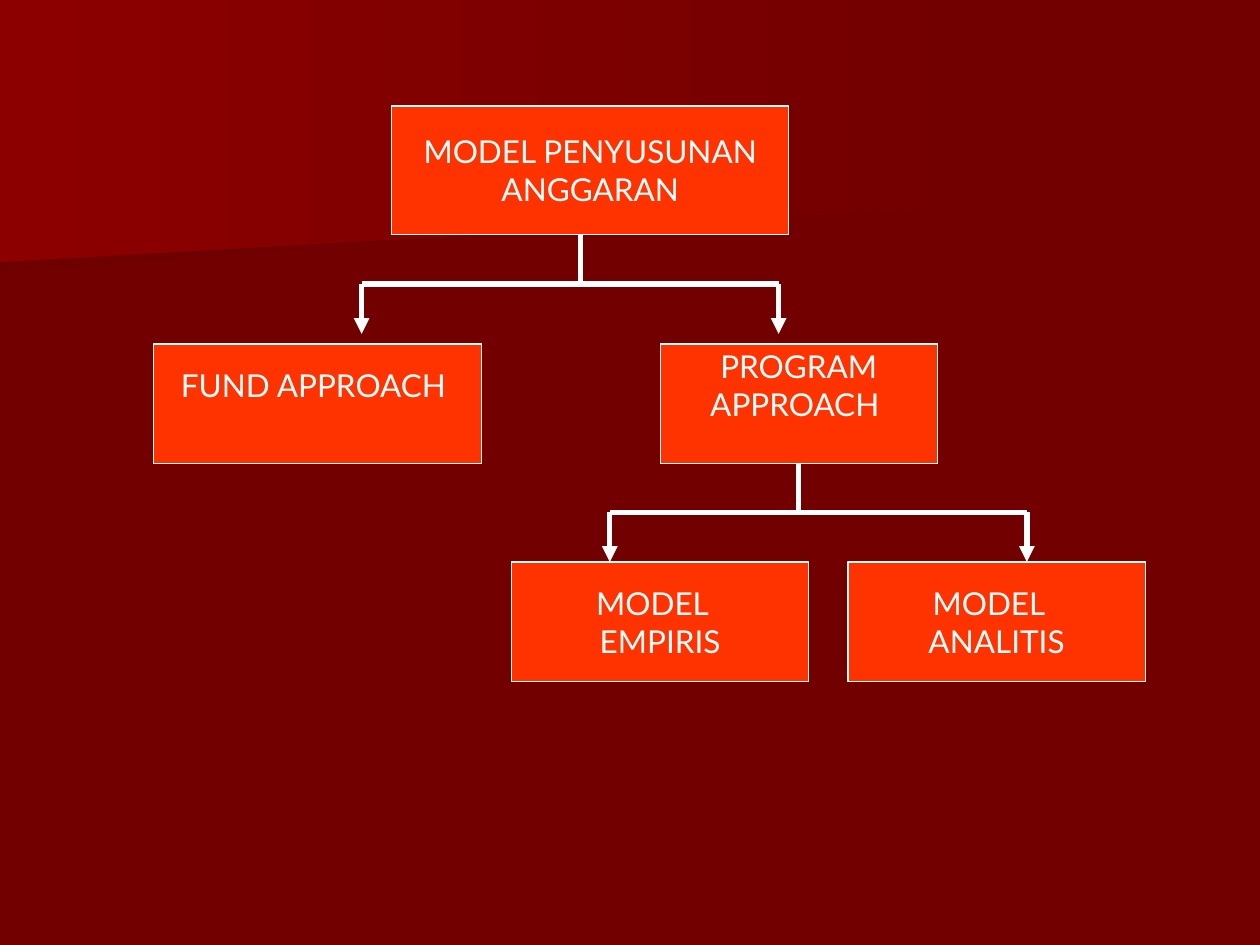
from lxml import etree
from pptx import Presentation
from pptx import util as u
from pptx.dml.color import RGBColor
from pptx.enum import shapes, text
from pptx.oxml.ns import qn

COLUMNS, ROWS = 100, 75
CELL = u.Inches(0.1)
COLORS = {"ground": "720000", "shade": "6F0000", "glow": "8C0000",
          "box": "FF3300", "ink": "FFFFFF"}
FONT = {"name": "Lato", "size": u.Pt(18)}
BOX_FORMAT = {"word_wrap": False, "vertical_anchor": text.MSO_ANCHOR.MIDDLE}
# Leaves one text line free at the bottom of the box
RAISED = {"margin_top": 0, "margin_bottom": u.Inches(0.3)}
BOTTOM = 2


def cells(*counts):
    return [round(count * CELL) for count in counts]


def color(name):
    return RGBColor.from_string(COLORS[name])


def apply(target, values):
    for key, value in values.items():
        setattr(target, key, value)


def add_band(slide, corners, start_color):
    """Draw a background band that fades rightwards into the ground colour."""
    points = [cells(*corner) for corner in corners]
    outline = slide.shapes.build_freeform(*points[0], scale=1.0)
    outline.add_line_segments(points[1:], close=True)
    band = outline.convert_to_shape()
    band.shadow.inherit = False
    band.line.fill.background()
    band.fill.gradient()
    band.fill.gradient_angle = 0
    for stop, name in zip(band.fill.gradient_stops, (start_color, "ground")):
        stop.color.rgb = color(name)


def add_background(slide):
    slide.background.fill.solid()
    slide.background.fill.fore_color.rgb = color("ground")
    add_band(slide, [(77.8, 15.3), (0, 21.7), (0, 10.1), (77.9, 10.1)], "shade")
    add_band(slide, [(79.2, 16.2), (0, 20.8), (0, 0), (79.2, 0)], "glow")


def add_box(slide, place, lines, margins=None):
    box = slide.shapes.add_shape(shapes.MSO_SHAPE.RECTANGLE, *cells(*place))
    box.shadow.inherit = False
    box.fill.solid()
    box.fill.fore_color.rgb = color("box")
    box.line.color.rgb = color("ink")
    box.line.width = u.Pt(0.75)
    frame = box.text_frame
    apply(frame, {**BOX_FORMAT, **(margins or {})})
    frame.text = "\n".join(lines)
    for paragraph in frame.paragraphs:
        paragraph.alignment = text.PP_ALIGN.CENTER
        for run in paragraph.runs:
            apply(run.font, FONT)
            run.font.color.rgb = color("ink")
    return box


def add_line(slide, start, end, arrow=False):
    line = slide.shapes.add_connector(
        shapes.MSO_CONNECTOR.STRAIGHT, *cells(*start, *end))
    line.line.color.rgb = color("ink")
    line.line.width = u.Pt(3)
    if arrow:
        etree.SubElement(line.line._get_or_add_ln(), qn("a:tailEnd"), type="triangle")
    etree.SubElement(line._element.spPr, qn("a:effectLst"))
    return line


def add_branch(slide, place, stem_x):
    """Split a stem in two: the stem fills the upper half, the arrows the lower."""
    left, top, width, height = place
    right, middle, bottom = left + width, top + height / 2, top + height
    add_line(slide, (left, middle), (right, middle))
    for x in (left, right):
        add_line(slide, (x, middle), (x, bottom), arrow=True)
    return add_line(slide, (stem_x, top), (stem_x, middle))


def add_model_tree(slide):
    add_box(slide, (31.1, 8.4, 31.5, 10.2), ["MODEL PENYUSUNAN", "ANGGARAN"])
    add_box(slide, (12.2, 27.3, 26, 9.5), ["FUND APPROACH "], RAISED)
    program = add_box(slide, (52.4, 27.3, 22, 9.5), ["PROGRAM", "APPROACH "], RAISED)
    for left, kind in ((40.6, "EMPIRIS"), (67.3, "ANALITIS")):
        add_box(slide, (left, 44.6, 23.6, 9.5), ["MODEL  ", kind])
    add_branch(slide, (28.7, 18.6, 33.1, 7.9), stem_x=46.1)
    program_stem = add_branch(slide, (48.4, 36.7, 33.1, 7.9), stem_x=63.4)
    program_stem.begin_connect(program, BOTTOM)


def main():
    deck = Presentation()
    deck.slide_width, deck.slide_height = cells(COLUMNS, ROWS)
    slide = deck.slides.add_slide(deck.slide_layouts[6])
    add_background(slide)
    add_model_tree(slide)
    deck.save("out.pptx")


if __name__ == "__main__":
    main()
